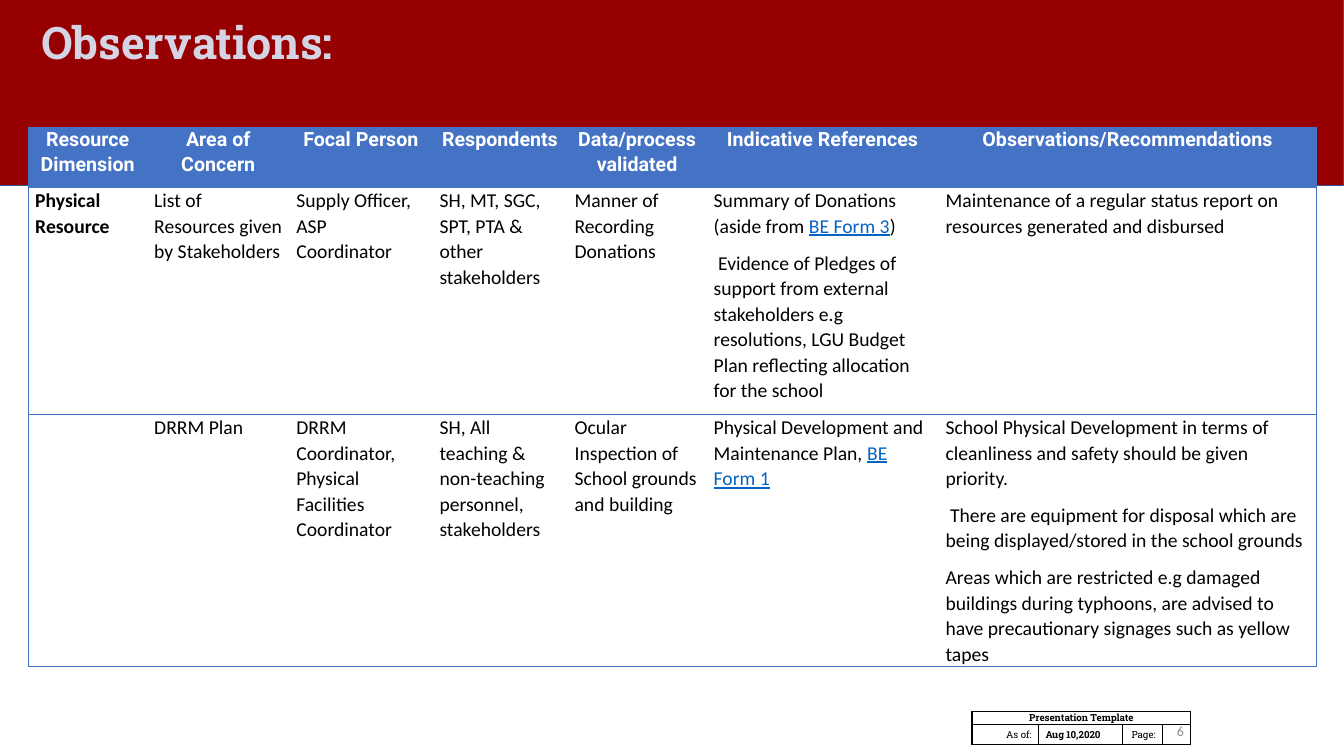
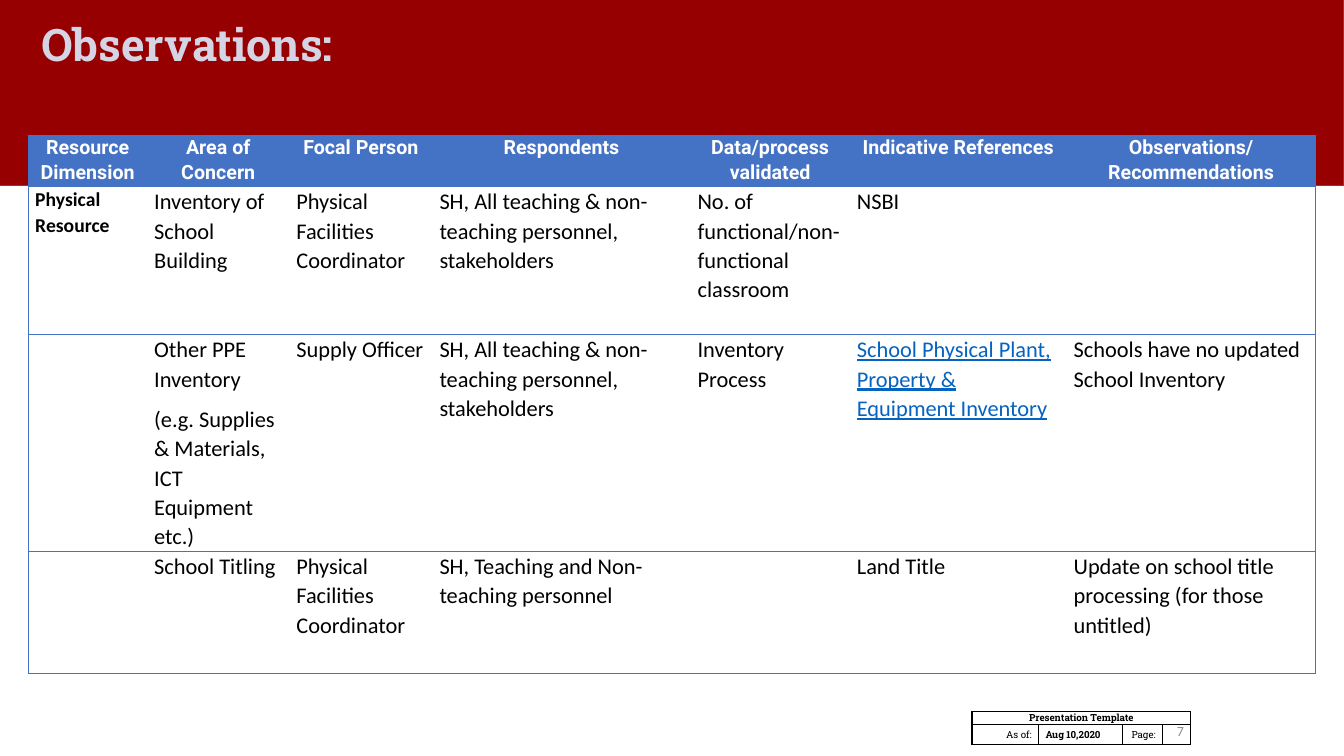
from lxml import etree
from pptx import Presentation
from pptx.dml.color import RGBColor
from pptx.enum.shapes import MSO_SHAPE
from pptx.enum.text import MSO_ANCHOR, PP_ALIGN
from pptx.oxml.ns import qn
from pptx.util import Inches, Pt

LEFT, CENTER, RIGHT = PP_ALIGN.LEFT, PP_ALIGN.CENTER, PP_ALIGN.RIGHT
TOP, MIDDLE = MSO_ANCHOR.TOP, MSO_ANCHOR.MIDDLE
RECTANGLE = MSO_SHAPE.RECTANGLE

COLORS = {
    "band": "960000", "band_line": "325491", "title": "D5D4E4",
    "accent": "4472C4", "white": "FFFFFF", "text": "000000",
    "link": "0563C1", "page": "8C8C8C",
}
TITLE_FONT, HEADER_FONT, BODY_FONT = "Roboto Slab", "Roboto", "Calibri"
SIDES = ("L", "R", "T", "B")

HEADERS = [
    "Resource Dimension", "Area of Concern", "Focal Person", "Respondents",
    "Data/process validated", "Indicative References", "Observations/Recommendations",
]
ALL_STAFF = "SH, All teaching & non-teaching personnel, stakeholders"
FACILITIES = "Physical Facilities Coordinator"

# In cell text, a line break starts a paragraph and square brackets mark a reference.
SLIDES = [
    {
        "page": "6", "title_top": -0.03, "table_top": 1.26, "body_size": 14,
        "columns": [1.18, 1.41, 1.42, 1.34, 1.38, 2.3, 3.75],
        "heights": [0.6, 2.25, 2.5],
        "rows": [
            ["Physical Resource", "List of Resources given by Stakeholders",
             "Supply Officer, ASP Coordinator",
             "SH, MT, SGC, SPT, PTA & other stakeholders",
             "Manner of Recording Donations",
             "Summary of Donations (aside from [BE Form 3])\n"
             " Evidence of Pledges of support from external stakeholders e.g "
             "resolutions, LGU Budget Plan reflecting allocation for the school",
             "Maintenance of a regular status report on resources generated and disbursed"],
            ["", "DRRM Plan", "DRRM Coordinator, " + FACILITIES, ALL_STAFF,
             "Ocular Inspection of School grounds and building",
             "Physical Development and Maintenance Plan, [BE Form 1]",
             "School Physical Development in terms of cleanliness and safety "
             "should be given priority.\n"
             " There are equipment for disposal which are being displayed/stored "
             "in the school grounds\n"
             "Areas which are restricted e.g damaged buildings during typhoons, are "
             "advised to have precautionary signages such as yellow tapes"],
        ],
    },
    {
        "page": "7", "title_top": -0.01, "table_top": 1.34, "body_size": 16,
        "columns": [1.18, 1.41, 1.42, 2.56, 1.58, 2.15, 2.47],
        "heights": [0.51, 1.47, 2.15, 1.21],
        "rows": [
            ["Physical Resource", "Inventory of School Building", FACILITIES, ALL_STAFF,
             "No. of functional/non-functional classroom", "NSBI", ""],
            ["", "Other PPE Inventory\n(e.g. Supplies & Materials, ICT Equipment etc.)",
             "Supply Officer", ALL_STAFF, "Inventory Process",
             "[School Physical Plant, Property & Equipment Inventory]",
             "Schools have no updated School Inventory"],
            ["", "School Titling", FACILITIES, "SH, Teaching and Non-teaching personnel",
             "", "Land Title", "Update on school title processing (for those untitled)"],
        ],
    },
]

FOOTER_COLUMNS = [0.66, 0.83, 0.4, 0.28]
FOOTER_HEIGHTS = [0.13, 0.2]
FOOTER_CELLS = [
    (0, 0, "Presentation Template", CENTER, True),
    (1, 0, "As of:", RIGHT, False),
    (1, 1, "Aug 10,2020", LEFT, True),
    (1, 2, "Page:", RIGHT, False),
]


def rgb(name):
    return RGBColor.from_string(COLORS[name])


def add_run(paragraph, text, font, size, color, bold=False, underline=False):
    run = paragraph.add_run()
    run.text = text
    run.font.name = font
    run.font.size = Pt(size)
    run.font.color.rgb = rgb(color)
    run.font.bold = bold
    run.font.underline = underline


def add_text(slide, box, text, align, *style):
    frame = slide.shapes.add_textbox(*map(Inches, box)).text_frame
    frame.word_wrap = True
    frame.vertical_anchor = MIDDLE
    paragraph = frame.paragraphs[0]
    paragraph.alignment = align
    add_run(paragraph, text, *style)
    return paragraph


def set_borders(cell, sides, color, width):
    properties = cell._tc.get_or_add_tcPr()
    for side in SIDES:
        line = etree.SubElement(properties, qn("a:ln" + side), w=str(Pt(width)))
        if side in sides:
            fill = etree.SubElement(line, qn("a:solidFill"))
            etree.SubElement(fill, qn("a:srgbClr"), val=COLORS[color])
        else:
            etree.SubElement(line, qn("a:noFill"))


def add_table(slide, left, top, columns, heights):
    frame = slide.shapes.add_table(
        len(heights), len(columns), Inches(left), Inches(top),
        Inches(sum(columns)), Inches(sum(heights)))
    table = frame.table
    table.horz_banding = False
    for column, width in zip(table.columns, columns):
        column.width = Inches(width)
    for row, height in zip(table.rows, heights):
        row.height = Inches(height)
    return table


def prepare_cell(cell, sides, color, width, fill=None, anchor=TOP):
    cell.margin_left = cell.margin_right = Inches(0.07)
    cell.margin_top = cell.margin_bottom = 0
    cell.vertical_anchor = anchor
    set_borders(cell, sides, color, width)
    if fill:
        cell.fill.solid()
        cell.fill.fore_color.rgb = rgb(fill)
    else:
        cell.fill.background()


def write_cell(cell, text, align, font, size, color, bold):
    frame = cell.text_frame
    for index, line in enumerate(text.split("\n")):
        paragraph = frame.add_paragraph() if index else frame.paragraphs[0]
        paragraph.alignment = align
        paragraph.line_spacing = 1.07
        paragraph.space_after = Pt(8)
        for part, piece in enumerate(line.replace("]", "[").split("[")):
            is_link = part % 2 == 1
            if piece:
                add_run(paragraph, piece, font, size,
                        "link" if is_link else color, bold, is_link)


def add_observations(slide, content):
    table = add_table(slide, 0.28, content["table_top"],
                      content["columns"], content["heights"])
    last = len(HEADERS) - 1
    for row, texts in enumerate([HEADERS] + content["rows"]):
        for column, text in enumerate(texts):
            cell = table.cell(row, column)
            sides = "TB" + ("L" if column == 0 else "") + ("R" if column == last else "")
            prepare_cell(cell, sides, "accent", 0.5, None if row else "accent")
            if row == 0:
                write_cell(cell, text, CENTER, HEADER_FONT, 14, "white", True)
            elif column == 0:
                write_cell(cell, text, LEFT, BODY_FONT, 14, "text", True)
            else:
                write_cell(cell, text, LEFT, BODY_FONT, content["body_size"], "text", False)


def add_footer(slide, page):
    table = add_table(slide, 9.64, 7.06, FOOTER_COLUMNS, FOOTER_HEIGHTS)
    table.first_row = False
    table.cell(0, 0).merge(table.cell(0, len(FOOTER_COLUMNS) - 1))
    for row in range(len(FOOTER_HEIGHTS)):
        for column in range(len(FOOTER_COLUMNS)):
            prepare_cell(table.cell(row, column), SIDES, "text", 1, anchor=MIDDLE)
    for row, column, text, align, bold in FOOTER_CELLS:
        paragraph = table.cell(row, column).text_frame.paragraphs[0]
        paragraph.alignment = align
        add_run(paragraph, text, TITLE_FONT, 7, "text", bold)
    page_paragraph = table.cell(1, 3).text_frame.paragraphs[0]
    etree.SubElement(page_paragraph._p, qn("a:endParaRPr"), sz="700")
    add_text(slide, (11.39, 7.05, 0.45, 0.4), page, RIGHT, BODY_FONT, 10, "page")


def add_band(slide):
    band = slide.shapes.add_shape(
        RECTANGLE, Inches(-0.28), Inches(-0.06), Inches(13.61), Inches(1.9))
    band.shadow.inherit = False
    band.fill.solid()
    band.fill.fore_color.rgb = rgb("band")
    band.line.color.rgb = rgb("band_line")
    band.line.width = Pt(1)


def main():
    presentation = Presentation()
    presentation.slide_width = Inches(13.33)
    presentation.slide_height = Inches(7.5)
    for content in SLIDES:
        slide = presentation.slides.add_slide(presentation.slide_layouts[6])
        add_band(slide)
        add_footer(slide, content["page"])
        title = add_text(slide, (0.31, content["title_top"], 11.5, 0.95), "Observations:",
                         LEFT, TITLE_FONT, 32, "title", True)
        title.line_spacing = 0.9
        add_observations(slide, content)
    presentation.save("out.pptx")


if __name__ == "__main__":
    main()
